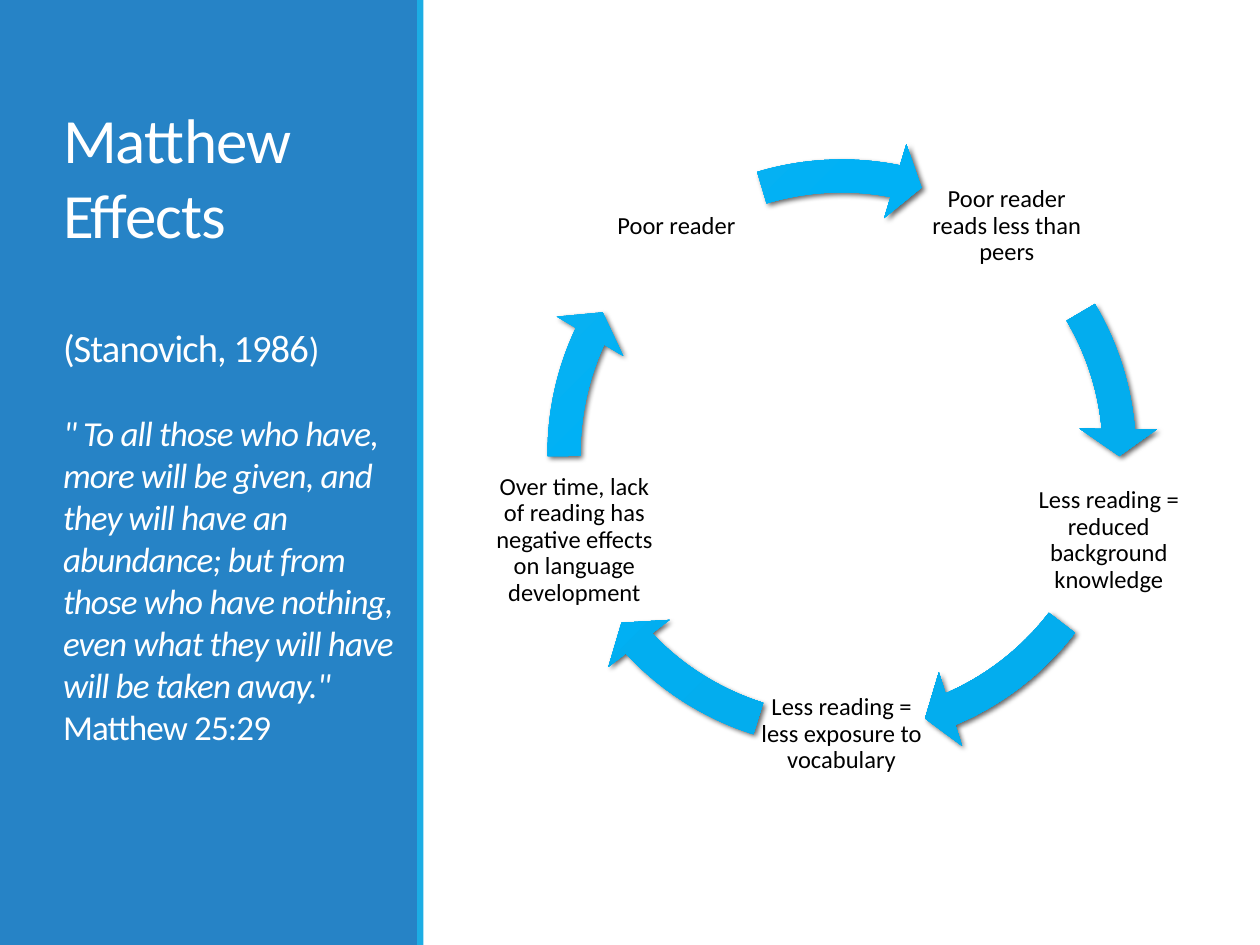
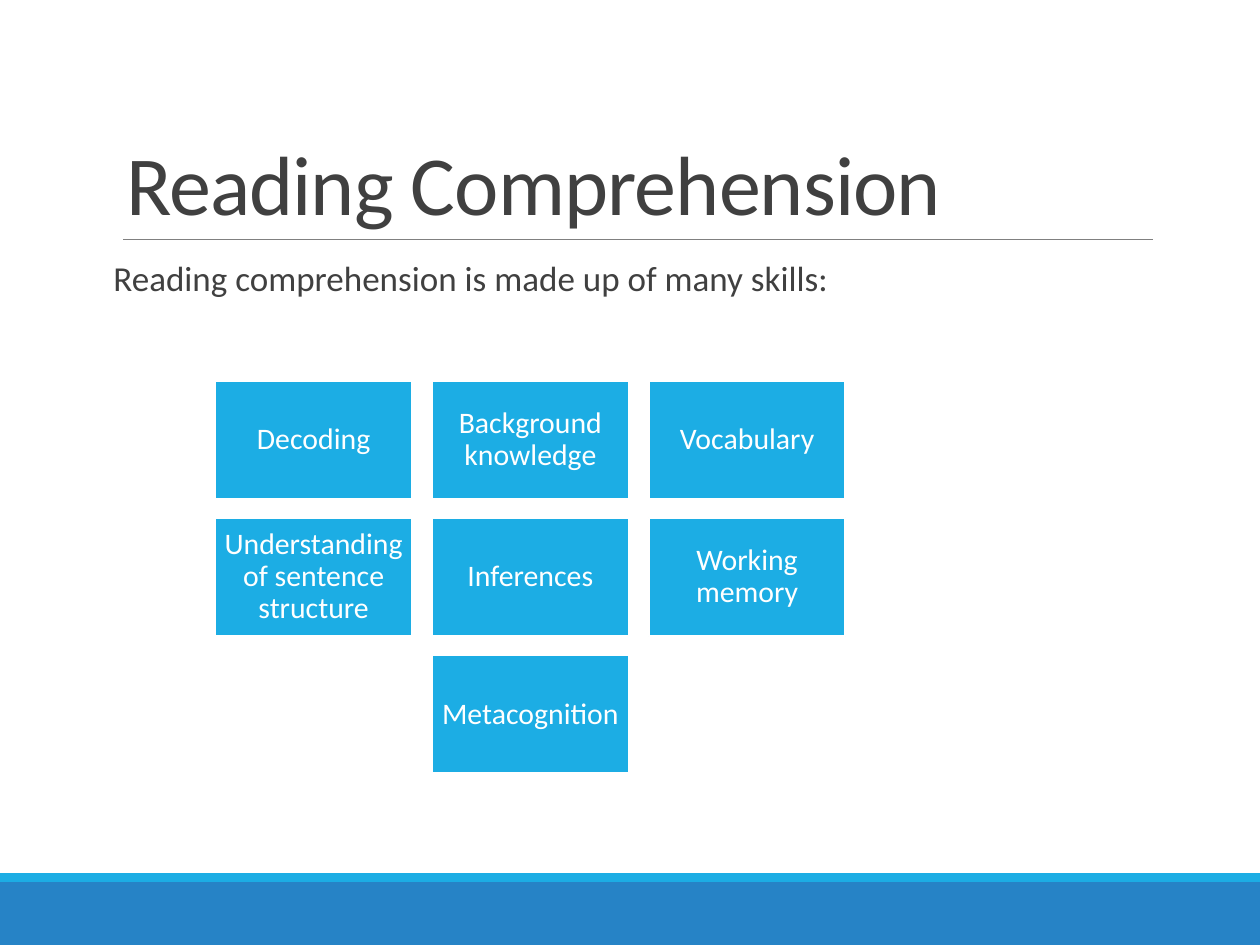
"""Build two slides on reading: a cycle of effects and a grid of skills."""
import math

import pptx
import pptx.dml.color
import pptx.enum.shapes
import pptx.enum.text
import pptx.oxml
import pptx.oxml.ns
import pptx.util

Inches, Pt = pptx.util.Inches, pptx.util.Pt
SHAPE = pptx.enum.shapes.MSO_SHAPE
ALIGN = pptx.enum.text.PP_ALIGN
ANCHOR = pptx.enum.text.MSO_ANCHOR
qn = pptx.oxml.ns.qn

THEME = {
    "font": "Calibri",
    "blue": "2683C6", "cyan": "1CADE4", "white": "FFFFFF",
    "black": "000000", "ink": "404040", "rule": "808080",
    "arrow": [(0, "00ADEF"), (34, "03ADEE"), (70, "00B1F5"), (100, "12B1EE")],
    "title": 48, "side_title": 36, "source": 22, "body": 20,
    "skill": 17, "label": 14,
}

SIDE_TITLE = [
    {"runs": [("Matthew Effects", "side_title", False)], "before": 0},
    {"runs": [("(Stanovich, 1986", "source", False), (")", "body", False)], "before": 41.4},
    {"runs": [("\" To all those who have, more will be given, and they will have an abundance; "
               "but from those who have nothing, even what they will have will be taken away.\" ",
               "body", True),
              ("Matthew 25:29", "body", False)], "before": 23.6},
]

CYCLE = [
    ("Poor reader reads less than peers", 329.42, 354.91),
    ("Less reading = reduced background knowledge", 37.53, 66.94),
    ("Less reading = less exposure to vocabulary", 107.47, 136.88),
    ("Over time, lack of reading has negative effects on language development", 179.5, 204.99),
    ("Poor reader", 253.29, 281.12),
]
CYCLE_X, CYCLE_Y, CYCLE_RADIUS = 6.68, 3.6, 2.23
LABEL_SIZE, RING_SIZE = 1.34, 5.02

COMPREHENSION = "Reading Comprehension"
INTRO = "Reading comprehension is made up of many skills: "
SKILLS = [
    ["Decoding", "Background knowledge", "Vocabulary"],
    ["Understanding of sentence structure", "Inferences", "Working memory"],
    ["Metacognition"],
]
GRID_LEFT, GRID_TOP, SKILL_W, SKILL_H, GAP_X, GAP_Y = 1.71, 3.02, 1.56, 0.94, 0.16, 0.15


def rgb(name):
    return pptx.dml.color.RGBColor.from_string(THEME.get(name, name))


def put(obj, values):
    for name, value in values.items():
        setattr(obj, name, value)


def place(sp, left, top, width, height):
    put(sp, {"left": Inches(left), "top": Inches(top),
             "width": Inches(width), "height": Inches(height)})


def frame(sp, anchor, insets):
    tf = sp.text_frame
    put(tf, {"word_wrap": True, "auto_size": pptx.enum.text.MSO_AUTO_SIZE.NONE,
             "vertical_anchor": anchor})
    sides = ("margin_left", "margin_top", "margin_right", "margin_bottom")
    put(tf, dict(zip(sides, map(Inches, insets))))
    return tf


def write(p, text, size, color, spacing=None, italic=False):
    r = p.add_run()
    r.text = text
    put(r.font, {"name": THEME["font"], "size": Pt(THEME[size]), "italic": italic})
    r.font.color.rgb = rgb(color)
    if spacing is not None:
        r._r.get_or_add_rPr().set("spc", str(spacing))


def para(p, align, line=1.0, before=0, after=0):
    put(p, {"alignment": align, "line_spacing": line,
            "space_before": Pt(before), "space_after": Pt(after)})


def block(s, kind, box, fill):
    sp = s.shapes.add_shape(kind, *map(Inches, box))
    sp.shadow.inherit = False
    sp.fill.solid()
    sp.fill.fore_color.rgb = rgb(fill)
    sp.line.fill.background()
    return sp


def centred_text(sp, text, size, color, inset):
    p = frame(sp, ANCHOR.MIDDLE, [inset] * 4).paragraphs[0]
    para(p, ALIGN.CENTER, 0.9)
    write(p, text, size, color)


def cycle_arrow(s, tail, head):
    half = RING_SIZE / 2
    sp = block(s, SHAPE.CIRCULAR_ARROW,
               (CYCLE_X - half, CYCLE_Y - half, RING_SIZE, RING_SIZE), "cyan")
    for i, value in enumerate((0.052, 5.59 * 0.6, head * 0.6, tail * 0.6, 0.061)):
        sp.adjustments[i] = value
    ns = pptx.oxml.ns.nsdecls("a")
    stops = "".join(f'<a:gs pos="{pos * 1000}"><a:srgbClr val="{color}"/></a:gs>'
                    for pos, color in THEME["arrow"])
    gradient = pptx.oxml.parse_xml(
        f'<a:gradFill {ns} rotWithShape="1"><a:gsLst>{stops}</a:gsLst><a:path path="circle">'
        '<a:fillToRect l="100000" t="100000"/></a:path></a:gradFill>')
    shadow = pptx.oxml.parse_xml(
        f'<a:outerShdw {ns} blurRad="{Pt(3)}" dist="{Pt(2)}" dir="2700000" rotWithShape="0">'
        f'<a:srgbClr val="{THEME["black"]}"><a:alpha val="60000"/></a:srgbClr></a:outerShdw>')
    spPr = sp._element.spPr
    spPr.replace(spPr.find(qn("a:solidFill")), gradient)
    spPr.find(qn("a:effectLst")).append(shadow)


def matthew_slide(prs):
    s = prs.slides.add_slide(prs.slide_layouts[5])
    block(s, SHAPE.RECTANGLE, (0, 0, 3.32, 7.5), "blue")
    block(s, SHAPE.RECTANGLE, (3.31, 0, 0.05, 7.5), "cyan")
    title = s.shapes.title
    s.shapes._spTree.append(title._element)
    place(title, 0.4, 0.57, 2.9, 6.31)
    tf = frame(title, ANCHOR.MIDDLE, (0.1, 0.05, 0.1, 0.77))
    for i, part in enumerate(SIDE_TITLE):
        p = tf.add_paragraph() if i else tf.paragraphs[0]
        para(p, ALIGN.LEFT, before=part["before"])
        for text, size, italic in part["runs"]:
            write(p, text, size, "white", -50, italic)
    for i, (text, tail, head) in enumerate(CYCLE):
        angle = math.radians(-54 + i * 360 / len(CYCLE))
        left = CYCLE_X + CYCLE_RADIUS * math.cos(angle) - LABEL_SIZE / 2
        top = CYCLE_Y + CYCLE_RADIUS * math.sin(angle) - LABEL_SIZE / 2
        label = s.shapes.add_textbox(*map(Inches, (left, top, LABEL_SIZE, LABEL_SIZE)))
        centred_text(label, text, "label", "black", 0.02)
        cycle_arrow(s, tail, head)


def comprehension_slide(prs):
    s = prs.slides.add_slide(prs.slide_layouts[1])
    block(s, SHAPE.RECTANGLE, (0, 7, 10, 0.5), "blue")
    block(s, SHAPE.RECTANGLE, (0, 6.93, 10, 0.07), "cyan")
    rule = s.shapes.add_connector(pptx.enum.shapes.MSO_CONNECTOR.STRAIGHT,
                                  *map(Inches, (0.98, 1.9, 9.15, 1.9)))
    rule.line.color.rgb = rgb("rule")
    rule.line.width = Pt(0.5)
    rule._element.spPr.append(pptx.oxml.parse_xml(
        f'<a:effectLst {pptx.oxml.ns.nsdecls("a")}/>'))

    title, body = s.shapes.title, s.placeholders[1]
    place(title, 0.9, 0.31, 8.25, 1.59)
    p = frame(title, ANCHOR.BOTTOM, (0.1, 0.05, 0.1, 0.05)).paragraphs[0]
    para(p, ALIGN.LEFT, 0.85)
    write(p, COMPREHENSION, "title", "ink", -50)

    place(body, 0.9, 2.02, 8.25, 4.4)
    p = frame(body, ANCHOR.TOP, (0, 0.05, 0, 0.05)).paragraphs[0]
    para(p, ALIGN.LEFT, 0.9, 12, 2)
    pPr = p._p.get_or_add_pPr()
    pPr.set("marL", "0")
    pPr.set("indent", "0")
    pPr.append(pptx.oxml.parse_xml(f'<a:buNone {pptx.oxml.ns.nsdecls("a")}/>'))
    write(p, INTRO, "body", "ink")

    for row, skills in enumerate(SKILLS):
        offset = (len(SKILLS[0]) - len(skills)) / 2
        for col, skill in enumerate(skills):
            left = GRID_LEFT + (col + offset) * (SKILL_W + GAP_X)
            top = GRID_TOP + row * (SKILL_H + GAP_Y)
            sp = block(s, SHAPE.RECTANGLE, (left, top, SKILL_W, SKILL_H), "cyan")
            sp.line.color.rgb = rgb("white")
            sp.line.width = Pt(1.25)
            centred_text(sp, skill, "skill", "white", 0.07)


def main():
    prs = pptx.Presentation()
    put(prs, {"slide_width": Inches(10), "slide_height": Inches(7.5)})
    matthew_slide(prs)
    comprehension_slide(prs)
    prs.save("out.pptx")


if __name__ == "__main__":
    main()
